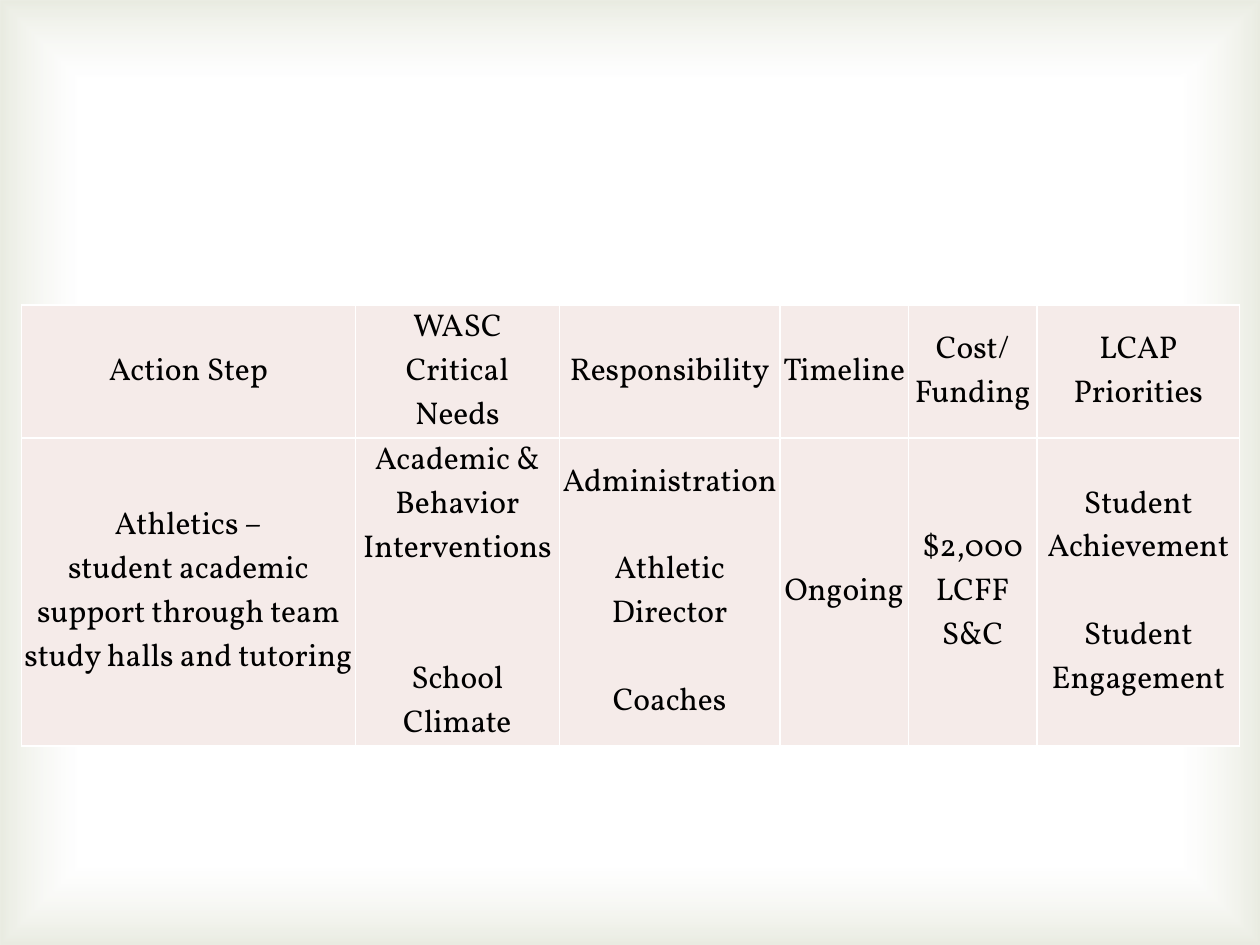
from pptx import Presentation
from pptx.dml.color import RGBColor
from pptx.enum.shapes import MSO_SHAPE
from pptx.enum.text import MSO_ANCHOR, PP_ALIGN
from pptx.oxml import parse_xml
from pptx.oxml.ns import nsdecls
from pptx.util import Inches, Pt

RECT = MSO_SHAPE.RECTANGLE
MIDDLE = MSO_ANCHOR.MIDDLE
CENTER = PP_ALIGN.CENTER
BLACK = RGBColor(0x00, 0x00, 0x00)
WHITE = RGBColor(0xFF, 0xFF, 0xFF)
OLIVE = RGBColor(0xA1, 0xAA, 0x7E)
PINK = RGBColor(0xF5, 0xEB, 0xE9)

# Content: each cell is a list of (text, blank lines above)
HEAD = [
    [("Action Step", 0)],
    [("WASC", 0), ("Critical", 0), ("Needs", 0)],
    [("Responsibility", 0)],
    [("Timeline", 0)],
    [("Cost/", 0), ("Funding", 0)],
    [("LCAP Priorities", 0)],
]
BODY = [
    [("Athletics –", 0),
     ("student academic support through team study halls and tutoring", 0)],
    [("Academic & Behavior Interventions", 0), ("School Climate", 2)],
    [("Administration", 0), ("Athletic Director", 1), ("Coaches", 1)],
    [("Ongoing", 0)],
    [("$2,000 LCFF S&C", 0)],
    [("Student Achievement", 0), ("Student Engagement", 1)],
]
ROWS = [HEAD, BODY]
COLS = [2.65, 1.62, 1.75, 1.02, 1.02, 1.61]
HIGH = [1.05, 2.44]
LEFT, TOP = 0.17, 2.42
LINE = 25  # points in one line of text

# Formats
FONT = {"name": "Vollkorn", "size": Pt(18), "bold": False}
CELL = {
    "vertical_anchor": MIDDLE,
    "margin_left": Inches(0.01),
    "margin_right": Inches(0.01),
    "margin_top": Inches(0.01),
    "margin_bottom": 0,
}
STOPS = [(83, WHITE, 11), (100, OLIVE, 23)]  # place, colour, opacity in %


def put(item, values):
    for name, value in values.items():
        setattr(item, name, value)


def add_glow(slide, width, height):
    glow = slide.shapes.add_shape(RECT, 0, 0, width, height)
    glow.shadow.inherit = False
    glow.line.fill.background()
    glow.fill.solid()
    stops = "".join(
        f'<a:gs pos="{pos * 1000}"><a:srgbClr val="{color}">'
        f'<a:alpha val="{alpha * 1000}"/></a:srgbClr></a:gs>'
        for pos, color, alpha in STOPS)
    grad = parse_xml(
        f'<a:gradFill {nsdecls("a")} rotWithShape="1"><a:gsLst>{stops}</a:gsLst>'
        '<a:path path="rect"><a:fillToRect l="50000" t="50000" r="50000" '
        'b="50000"/></a:path></a:gradFill>')
    props = glow.element.spPr
    props.replace(props.find("{*}solidFill"), grad)


def add_edges(cell):
    props = cell._tc.get_or_add_tcPr()
    for side in "LRTB":
        props.append(parse_xml(
            f'<a:ln{side} {nsdecls("a")} w="{Pt(1)}"><a:solidFill>'
            f'<a:srgbClr val="{WHITE}"/></a:solidFill></a:ln{side}>'))


def fill_cell(cell, lines):
    put(cell, CELL)
    add_edges(cell)
    cell.fill.solid()
    cell.fill.fore_color.rgb = PINK
    frame = cell.text_frame
    for i, (text, gap) in enumerate(lines):
        para = frame.add_paragraph() if i else frame.paragraphs[0]
        para.alignment = CENTER
        para.space_before = Pt(gap * LINE)
        run = para.add_run()
        run.text = text
        put(run.font, FONT)
        run.font.color.rgb = BLACK


def main():
    prs = Presentation()
    prs.slide_width, prs.slide_height = Inches(10), Inches(7.5)
    slide = prs.slides.add_slide(prs.slide_layouts[6])

    # Soft frame around the slide
    add_glow(slide, prs.slide_width, prs.slide_height)

    # Action plan table
    table = slide.shapes.add_table(
        len(ROWS), len(COLS), Inches(LEFT), Inches(TOP),
        Inches(sum(COLS)), Inches(sum(HIGH))).table
    table.first_row = table.horz_banding = False
    for col, width in zip(table.columns, COLS):
        col.width = Inches(width)
    for row, height, cells in zip(table.rows, HIGH, ROWS):
        row.height = Inches(height)
        for cell, lines in zip(row.cells, cells):
            fill_cell(cell, lines)

    prs.save("out.pptx")


if __name__ == "__main__":
    main()
